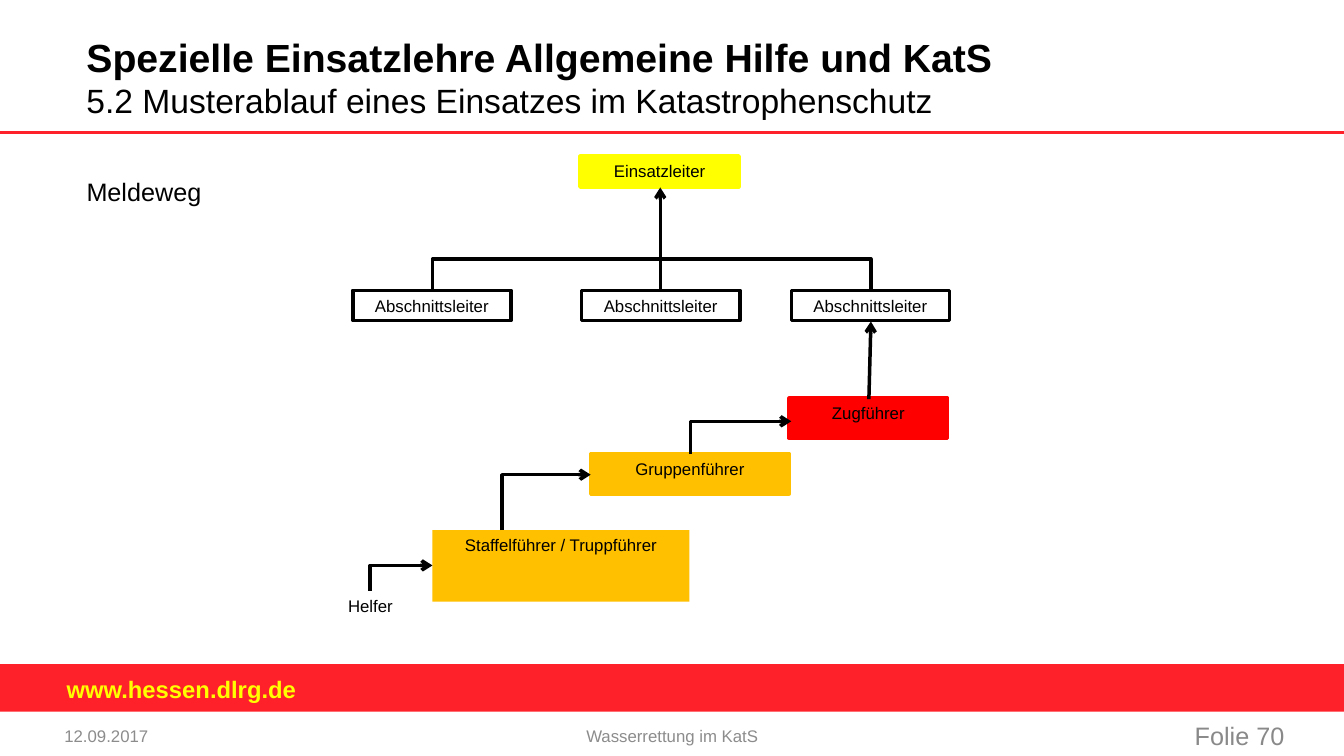
"""Build the slide showing the reporting chain in a disaster response."""
from lxml import etree
from pptx import Presentation
from pptx import util as u
from pptx.dml.color import RGBColor
from pptx.enum import shapes, text
from pptx.oxml.ns import qn

CELL = u.Inches(0.1)
COLUMNS, ROWS = 133.33, 75
BLACK, RED, ORANGE, YELLOW = "000000", "FF0000", "FFC000", "FFFF00"
BRAND_RED, GREY, PAGE_GREY = "FF2129", "8C8C8C", "898989"
LEFT, CENTER, RIGHT = text.PP_ALIGN.LEFT, text.PP_ALIGN.CENTER, text.PP_ALIGN.RIGHT
TOP, MIDDLE = text.MSO_ANCHOR.TOP, text.MSO_ANCHOR.MIDDLE
STRAIGHT, ELBOW = shapes.MSO_CONNECTOR.STRAIGHT, shapes.MSO_CONNECTOR.ELBOW
color = RGBColor.from_string

presentation = Presentation()
presentation.slide_width = int(COLUMNS * CELL)
presentation.slide_height = ROWS * CELL
slide = presentation.slides.add_slide(presentation.slide_layouts[6])


def add_box(grid, lines, fill=None, outline=None, weight=2.5, align=LEFT, anchor=TOP, wrap=True):
    """Add a text box, or a rectangle if it has a fill or an outline."""
    place = [int(cells * CELL) for cells in grid]
    if fill or outline:
        shape = slide.shapes.add_shape(shapes.MSO_SHAPE.RECTANGLE, *place)
        shape.shadow.inherit = False
        if fill:
            shape.fill.solid()
            shape.fill.fore_color.rgb = color(fill)
        else:
            shape.fill.background()
        if outline:
            shape.line.color.rgb = color(outline)
            shape.line.width = u.Pt(weight)
        else:
            shape.line.fill.background()
    else:
        shape = slide.shapes.add_textbox(*place)
    frame = shape.text_frame
    frame.word_wrap = wrap
    frame.vertical_anchor = anchor
    for index, (words, size, ink, bold) in enumerate(lines):
        paragraph = frame.add_paragraph() if index else frame.paragraphs[0]
        paragraph.alignment = align
        run = paragraph.add_run()
        run.text = words
        run.font.name = "Arial"
        run.font.size = u.Pt(size)
        run.font.bold = bold
        run.font.color.rgb = color(ink)
    return shape


def add_line(kind, grid, ink=BLACK, weight=2.5, arrow=True):
    """Add a connector; an elbow leaves its start vertically."""
    line = slide.shapes.add_connector(kind, *[int(cells * CELL) for cells in grid])
    line.line.color.rgb = color(ink)
    line.line.width = u.Pt(weight)
    properties = line._element.spPr
    if kind == ELBOW:
        guides = properties.find(qn("a:prstGeom")).get_or_add_avLst()
        etree.SubElement(guides, qn("a:gd"), name="adj1", fmla="val 0")
    if arrow:
        etree.SubElement(properties.find(qn("a:ln")), qn("a:tailEnd"), type="arrow")
    etree.SubElement(properties, qn("a:effectLst"))


add_line(STRAIGHT, (0, 13.1, COLUMNS, 13.1), BRAND_RED, 2.13, arrow=False)
add_box((0, 65.9, COLUMNS, 4.7), [], fill=BRAND_RED)
website = add_box((5.2, 66.1, 37.3, 4.4), [("www.hessen.dlrg.de", 17, YELLOW, True)])
website.text_frame.margin_left = website.text_frame.margin_right = u.Inches(0.14)
website.text_frame.margin_top = website.text_frame.margin_bottom = u.Inches(0.08)

add_box((7.6, 2.7, 113.4, 9.8), [
    ("Spezielle Einsatzlehre Allgemeine Hilfe und KatS", 28, BLACK, True),
    ("5.2 Musterablauf eines Einsatzes im Katastrophenschutz", 24, BLACK, False),
], anchor=MIDDLE)
add_box((7.6, 17, 14.5, 4), [("Meldeweg", 18, BLACK, False)], wrap=False)

footers = [
    (5.4, 26.6, "12.09.2017", 12, GREY, LEFT),
    (47, 39.4, "Wasserrettung im KatS", 12, GREY, CENTER),
    (101, 27.4, "Folie 70", 18, PAGE_GREY, RIGHT),
]
for left, width, words, size, ink, align in footers:
    add_box((left, 71, width, 4), [(words, size, ink, False)], align=align, anchor=MIDDLE)

roles = [
    ("Helfer", (30.6, 58.6, 12.3, 4), None, None, 0),
    ("Staffelführer / Truppführer", (42.9, 52.6, 25.5, 7.1), ORANGE, None, 0),
    ("Gruppenführer", (58.6, 45, 19.7, 4), ORANGE, ORANGE, 2.5),
    ("Zugführer", (78.3, 39.5, 15.7, 4), RED, RED, 2.5),
    ("Einsatzleiter", (57.6, 15.5, 15.7, 3), YELLOW, YELLOW, 3),
]
roles += [("Abschnittsleiter", (left, 28.8, 15.7, 3), None, BLACK, 2.5) for left in (35, 57.7, 78.5)]
for role, grid, fill, outline, weight in roles:
    add_box(grid, [(role, 12, BLACK, False)], fill, outline, weight, align=CENTER)

for step in [(36.7, 58.6, 42.9, 56.1), (49.8, 52.6, 58.6, 47.1), (68.5, 45, 78.5, 41.8)]:
    add_line(ELBOW, step)
for section in (42.9, 86.4):
    add_line(ELBOW, (section, 28.8, 65.5, 25.7), arrow=False)
for rise in [(65.5, 28.8, 65.5, 18.6), (86.2, 39.6, 86.4, 31.9)]:
    add_line(STRAIGHT, rise)

presentation.save("out.pptx")
